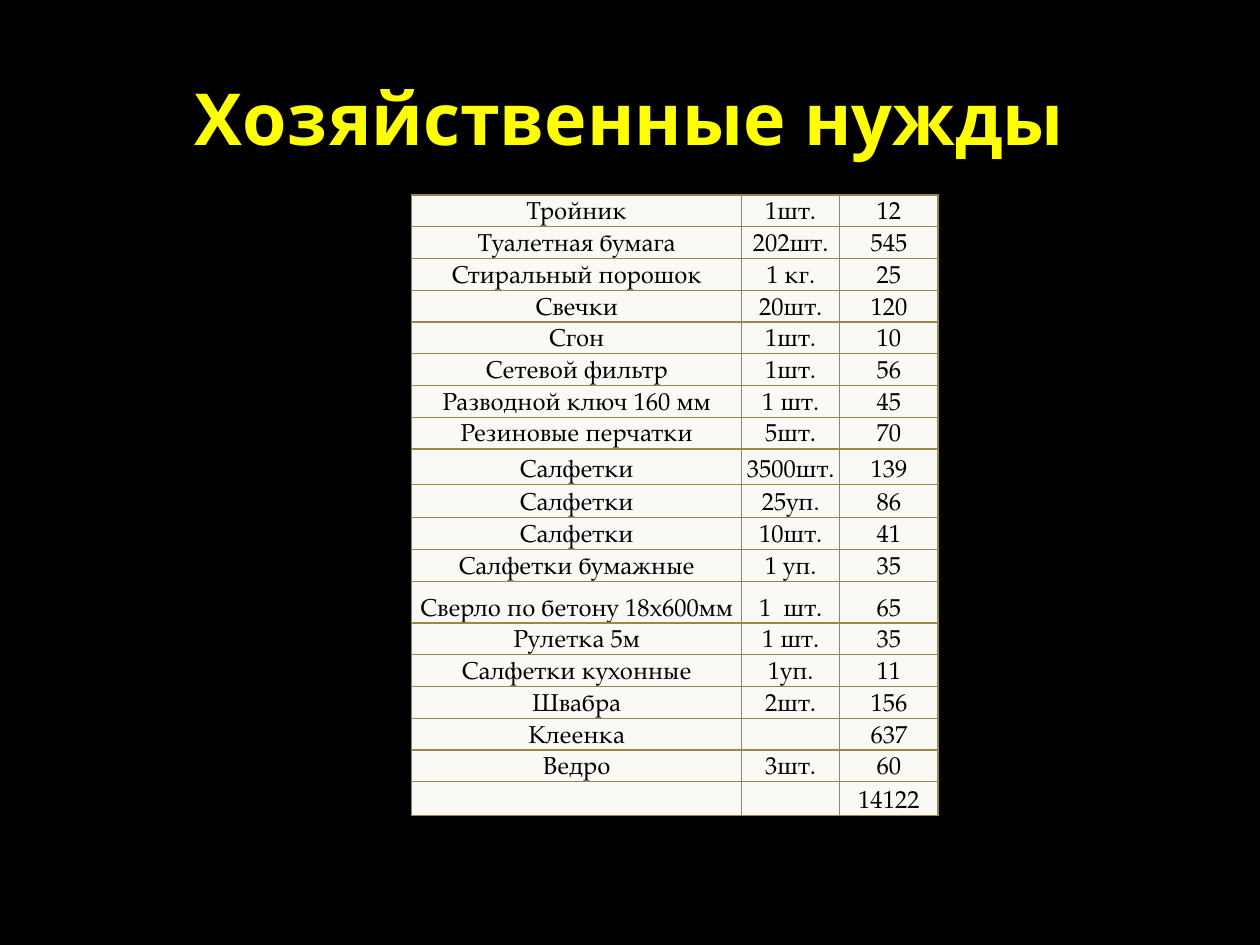
from lxml import etree
from pptx import Presentation
from pptx.dml.color import RGBColor
from pptx.enum.text import MSO_ANCHOR, PP_ALIGN
from pptx.oxml.ns import qn
from pptx.util import Cm, Pt

CENTER = PP_ALIGN.CENTER
MIDDLE = MSO_ANCHOR.MIDDLE
BOTTOM = MSO_ANCHOR.BOTTOM

COLORS = {
    "background": "000000",
    "title": "FFFF00",
    "cell": "FAF9F6",
    "text": "000000",
    "border": "998946",
}
TITLE_FONT = "Noto Sans"
TABLE_FONT = "TeX Gyre Pagella"

COLUMN_WIDTHS = [6.65, 1.98, 1.98]
ROW_HEIGHT = 0.64
TALL_ROWS = {8: 0.72, 9: 0.67, 12: 0.84, 18: 0.68}
CELL_MARGIN = 0.03
BORDER_WIDTH = 0.75

PURCHASES = [
    ("Тройник", "1шт.", "12"),
    ("Туалетная бумага", "202шт.", "545"),
    ("Стиральный порошок", "1 кг.", "25"),
    ("Свечки", "20шт.", "120"),
    ("Сгон", "1шт.", "10"),
    ("Сетевой фильтр", "1шт.", "56"),
    ("Разводной ключ 160 мм", "1 шт.", "45"),
    ("Резиновые перчатки", "5шт.", "70"),
    ("Салфетки", "3500шт.", "139"),
    ("Салфетки", "25уп.", "86"),
    ("Салфетки", "10шт.", "41"),
    ("Салфетки бумажные", "1 уп.", "35"),
    ("Сверло по бетону 18х600мм", "1  шт.", "65"),
    ("Рулетка 5м", "1 шт.", "35"),
    ("Салфетки кухонные", "1уп.", "11"),
    ("Швабра", "2шт.", "156"),
    ("Клеенка", "", "637"),
    ("Ведро", "3шт.", "60"),
    ("", "", "14122"),
]


def color(name):
    """Return the named colour as an RGBColor."""
    return RGBColor.from_string(COLORS[name])


def format_paragraph(paragraph, font_name, size, color_name, bold=False):
    """Centre a paragraph and set its font."""
    paragraph.alignment = CENTER
    paragraph.font.name = font_name
    paragraph.font.size = Pt(size)
    paragraph.font.bold = bold
    paragraph.font.color.rgb = color(color_name)


def add_borders(cell):
    """Draw a solid line on all four sides of a cell."""
    properties = cell._tc.get_or_add_tcPr()
    for side in ("a:lnL", "a:lnR", "a:lnT", "a:lnB"):
        line = etree.SubElement(properties, qn(side), w=str(Pt(BORDER_WIDTH)))
        fill = etree.SubElement(line, qn("a:solidFill"))
        etree.SubElement(fill, qn("a:srgbClr"), val=COLORS["border"])


def format_cell(cell, text):
    """Fill, frame and label one table cell."""
    add_borders(cell)
    cell.fill.solid()
    cell.fill.fore_color.rgb = color("cell")
    cell.margin_left = cell.margin_right = cell.margin_top = Cm(CELL_MARGIN)
    cell.margin_bottom = 0
    cell.vertical_anchor = BOTTOM
    cell.text = text
    format_paragraph(cell.text_frame.paragraphs[0], TABLE_FONT, 14, "text")


def place_title(slide, left, top, width, height):
    """Place the heading in the title placeholder."""
    title = slide.shapes.title
    title.left, title.top = Cm(left), Cm(top)
    title.width, title.height = Cm(width), Cm(height)
    title.text_frame.text = "Хозяйственные нужды"
    title.text_frame.vertical_anchor = MIDDLE
    format_paragraph(title.text_frame.paragraphs[0], TITLE_FONT, 41, "title", True)


def place_purchases(slide, left, top):
    """Place the table of purchases with its top left corner at the given point."""
    heights = [TALL_ROWS.get(index, ROW_HEIGHT) for index in range(len(PURCHASES))]
    table = slide.shapes.add_table(
        len(PURCHASES), len(COLUMN_WIDTHS), Cm(left), Cm(top),
        Cm(sum(COLUMN_WIDTHS)), Cm(sum(heights)),
    ).table
    table.first_row = table.horz_banding = False
    for column, width in zip(table.columns, COLUMN_WIDTHS):
        column.width = Cm(width)
    for row, height, purchase in zip(table.rows, heights, PURCHASES):
        row.height = Cm(height)
        for cell, text in zip(row.cells, purchase):
            format_cell(cell, text)


def main():
    """Build the slide and save the presentation."""
    presentation = Presentation()
    presentation.slide_width, presentation.slide_height = Cm(25.4), Cm(19.05)
    slide = presentation.slides.add_slide(presentation.slide_layouts[5])
    slide.background.fill.solid()
    slide.background.fill.fore_color.rgb = color("background")
    place_title(slide, 1.27, 0.76, 22.86, 3.18)
    place_purchases(slide, 8.3, 3.93)
    presentation.save("out.pptx")


if __name__ == "__main__":
    main()
